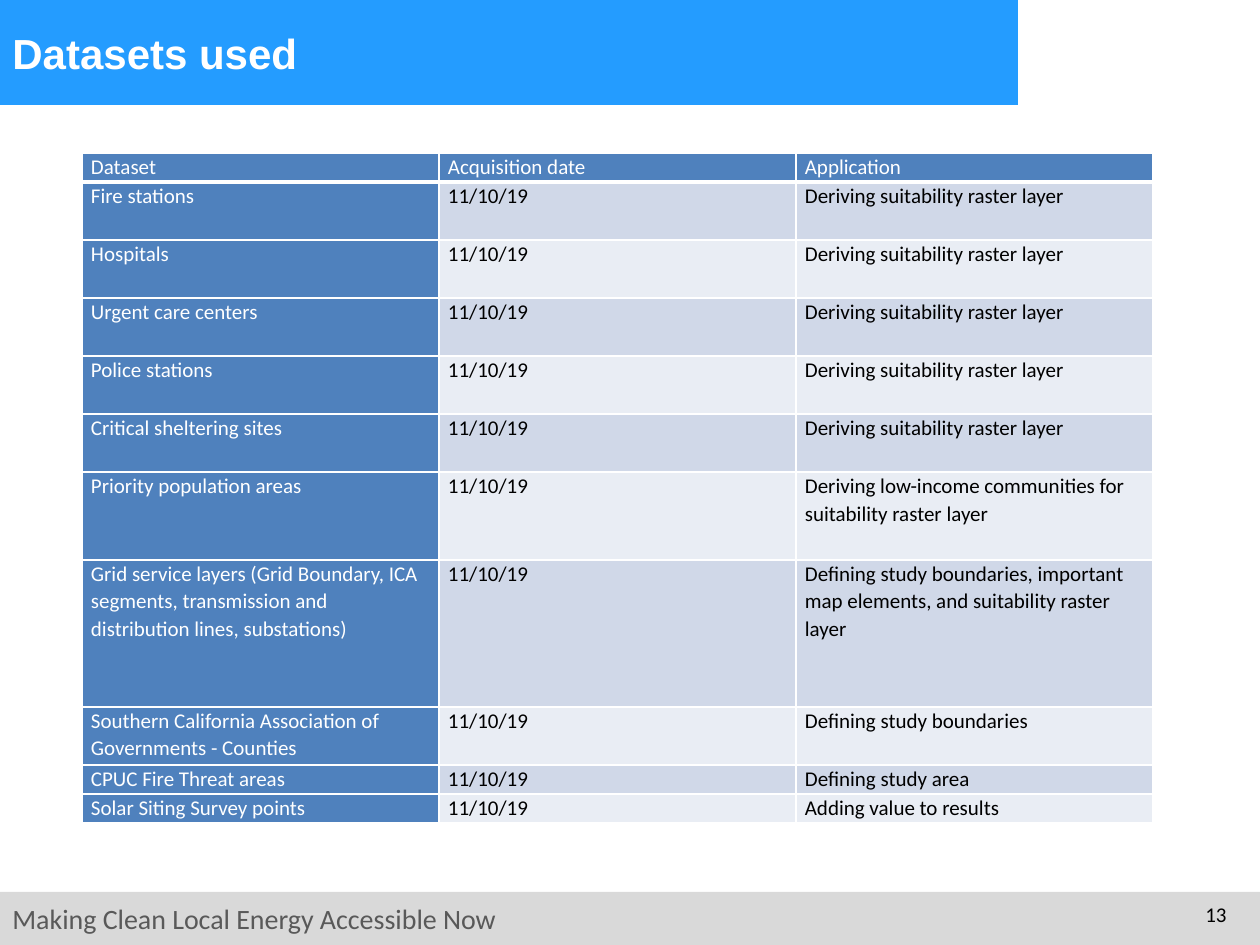
"""Build the slide listing the datasets used in the study."""
from lxml.etree import SubElement
from pptx import Presentation
from pptx.dml.color import RGBColor
from pptx.enum.shapes import MSO_SHAPE as Shape
from pptx.enum.text import MSO_ANCHOR as Anchor, PP_ALIGN as Align
from pptx.oxml.ns import qn
from pptx.util import Emu, Pt

WHITE = RGBColor(0xFF, 0xFF, 0xFF)
BLACK = RGBColor(0x00, 0x00, 0x00)
SLOGAN_GRAY = RGBColor(0x59, 0x59, 0x59)
FOOTER_GRAY = RGBColor(0xD9, 0xD9, 0xD9)
TITLE_BLUE = RGBColor(0x24, 0x9C, 0xFF)
HEADER_BLUE = RGBColor(0x4F, 0x81, 0xBD)
BANDS = (RGBColor(0xE9, 0xED, 0xF4), RGBColor(0xD0, 0xD8, 0xE8))

DATE = "11/10/19"
SUITABILITY = "Deriving suitability raster layer"
HEADINGS = ("Dataset", "Acquisition date", "Application")
DATASETS = [
    ("Fire stations", SUITABILITY, 58),
    ("Hospitals", SUITABILITY, 58),
    ("Urgent care centers", SUITABILITY, 58),
    ("Police stations", SUITABILITY, 58),
    ("Critical sheltering sites", SUITABILITY, 58),
    ("Priority population areas",
     "Deriving low-income communities for suitability raster layer", 88),
    ("Grid service layers (Grid Boundary, ICA segments, transmission and "
     "distribution lines, substations)",
     "Defining study boundaries, important map elements, and suitability "
     "raster layer", 147),
    ("Southern California Association of Governments - Counties",
     "Defining study boundaries", 58),
    ("CPUC Fire Threat areas", "Defining study area", 29),
    ("Solar Siting Survey points", "Adding value to results", 29),
]


def px(length):
    """Turn pixels into EMU."""
    return Emu(round(length * 914400 / 126))


class SlideBuilder:
    """Hold the text style and the current slide."""

    def __init__(self, slide, font="Calibri", size=12):
        self.slide = slide
        self.font = font
        self.size = size

    def style(self, paragraph, color, size=None, font=None, bold=False):
        """Format the runs of a paragraph."""
        for run in paragraph.runs:
            run.font.name = font or self.font
            run.font.size = Pt(size or self.size)
            run.font.bold = bold
            run.font.color.rgb = color

    def band(self, left, top, width, height, color):
        """Draw a plain filled rectangle."""
        band = self.slide.shapes.add_shape(
            Shape.RECTANGLE, px(left), px(top), px(width), px(height))
        band.shadow.inherit = False
        band.fill.solid()
        band.fill.fore_color.rgb = color
        band.line.fill.background()

    def text(self, words, left, top, width, height, color,
             align=Align.LEFT, anchor=Anchor.TOP, **look):
        """Place one line of text."""
        frame = self.slide.shapes.add_textbox(
            px(left), px(top), px(width), px(height)).text_frame
        frame.word_wrap = True
        frame.vertical_anchor = anchor
        frame.text = words
        frame.paragraphs[0].alignment = align
        self.style(frame.paragraphs[0], color, **look)

    def borders(self, cell, bottom):
        """Give a cell white borders."""
        properties = cell._tc.get_or_add_tcPr()
        for side, points in (("L", 1), ("R", 1), ("T", 1), ("B", bottom)):
            line = SubElement(properties, qn(f"a:ln{side}"), w=str(Pt(points)))
            fill = SubElement(line, qn("a:solidFill"))
            SubElement(fill, qn("a:srgbClr"), val=str(WHITE))

    def cell(self, cell, words, fill, color, bottom):
        """Fill and format one table cell."""
        cell.margin_left = cell.margin_right = px(9)
        cell.margin_top = cell.margin_bottom = 0
        self.borders(cell, bottom)
        cell.fill.solid()
        cell.fill.fore_color.rgb = fill
        cell.text = words
        paragraph = cell.text_frame.paragraphs[0]
        paragraph.line_spacing = 1.07
        self.style(paragraph, color)

    def table(self, rows, heights, left, top, column_width):
        """Draw a table with a coloured first row and column."""
        columns = len(rows[0])
        table = self.slide.shapes.add_table(
            len(rows), columns, px(left), px(top),
            px(column_width * columns), px(sum(heights))).table
        for column in table.columns:
            column.width = px(column_width)
        for r, (row, height) in enumerate(zip(rows, heights)):
            table.rows[r].height = px(height)
            for c, words in enumerate(row):
                heading = r == 0 or c == 0
                self.cell(table.cell(r, c), words,
                          HEADER_BLUE if heading else BANDS[r % 2],
                          WHITE if heading else BLACK,
                          3 if r == 0 else 1)


def main():
    """Build and save the slide."""
    deck = Presentation()
    deck.slide_width, deck.slide_height = px(1260), px(945)
    builder = SlideBuilder(deck.slides.add_slide(deck.slide_layouts[6]))

    builder.band(0, 892, 1260, 53, FOOTER_GRAY)
    builder.text("Making Clean Local Energy Accessible Now",
                 0, 895, 651, 47, SLOGAN_GRAY, size=16)
    builder.band(0, 0, 1018, 105, TITLE_BLUE)
    builder.text("13", 1176, 895, 63, 50, BLACK, align=Align.RIGHT)
    builder.text("Datasets used", 0, 0, 1008, 105, WHITE,
                 anchor=Anchor.MIDDLE, size=24, font="Arial", bold=True)

    rows = [HEADINGS] + [(name, DATE, use) for name, use, _ in DATASETS]
    heights = [29] + [height for _, _, height in DATASETS]
    builder.table(rows, heights, left=82, top=153, column_width=357)

    deck.save("out.pptx")


if __name__ == "__main__":
    main()
